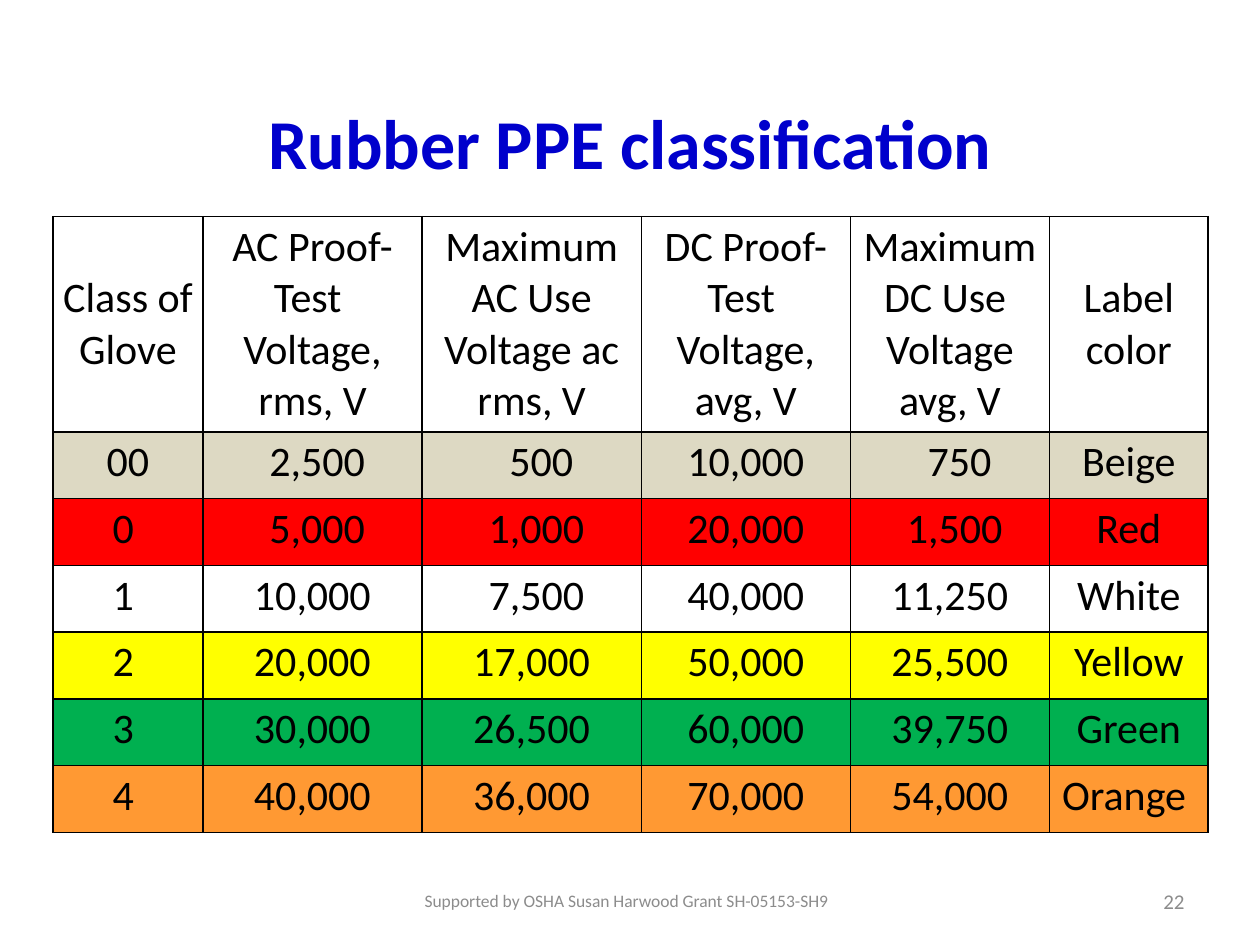
from dataclasses import dataclass

import pptx
import pptx.dml.color
import pptx.enum.text
import pptx.oxml
import pptx.oxml.ns
import pptx.util
from pptx.enum.text import MSO_ANCHOR, PP_ALIGN


@dataclass(frozen=True)
class Theme:
    font: str = "Calibri"
    title: str = "0000CC"
    ink: str = "000000"
    muted: str = "8C8C8C"
    title_size: int = 40
    table_size: int = 24
    footer_size: int = 10
    number_size: int = 12
    border_width: int = 1


@dataclass(frozen=True)
class Box:
    """A rectangle in inches."""
    left: float
    top: float
    width: float
    height: float


@dataclass(frozen=True)
class GloveClass:
    name: str
    voltages: tuple[int, int, int, int]
    label: str
    fill: str | None


THEME = Theme()
FIGURE_SPACE = " "
VOLTAGE_DIGITS = 5
CLASS_DIGITS = 2
TITLE_BOX = Box(0.5, 0.5, 9, 1.25)
TABLE_BOX = Box(0.42, 1.72, 9.17, 4.75)
FOOTER_BOX = Box(3.18, 6.95, 3.58, 0.4)
NUMBER_BOX = Box(7.17, 6.95, 2.33, 0.4)
COLUMN_WIDTHS = (1.19, 1.74, 1.74, 1.66, 1.58, 1.26)
HEADER_HEIGHT, ROW_HEIGHT = 1.57, 0.53

HEADERS = (
    "Class of Glove",
    "AC Proof-Test \nVoltage, rms, V",
    "Maximum AC Use Voltage ac rms, V",
    "DC Proof-Test \nVoltage, avg, V",
    "Maximum DC Use \nVoltage avg, V",
    "Label color",
)
GLOVE_CLASSES = (
    GloveClass("00", (2500, 500, 10000, 750), "Beige", "DDD9C3"),
    GloveClass("0", (5000, 1000, 20000, 1500), "Red", "FF0000"),
    GloveClass("1", (10000, 7500, 40000, 11250), "White", None),
    GloveClass("2", (20000, 17000, 50000, 25500), "Yellow", "FFFF00"),
    GloveClass("3", (30000, 26500, 60000, 39750), "Green", "00B050"),
    GloveClass("4", (40000, 36000, 70000, 54000), "Orange ", "FF9933"),
)


def inches(box: Box) -> list[pptx.util.Length]:
    return [pptx.util.Inches(n) for n in (box.left, box.top, box.width, box.height)]


def write(text_frame, text: str, size: int, color: str,
          align=PP_ALIGN.CENTER, bold: bool = False) -> None:
    """Fill the first paragraph, with a line break at each newline."""
    paragraph = text_frame.paragraphs[0]
    paragraph.alignment = align
    for index, line in enumerate(text.split("\n")):
        if index:
            paragraph.add_line_break()
        run = paragraph.add_run()
        run.text = line
        run.font.name = THEME.font
        run.font.size = pptx.util.Pt(size)
        run.font.bold = bold
        run.font.color.rgb = pptx.dml.color.RGBColor.from_string(color)


def add_title(slide, text: str) -> None:
    title = slide.shapes.title
    title.left, title.top, title.width, title.height = inches(TITLE_BOX)
    title.text_frame.vertical_anchor = MSO_ANCHOR.MIDDLE
    write(title.text_frame, text, THEME.title_size, THEME.title, bold=True)


def add_footer(slide, box: Box, text: str, size: int, align) -> None:
    text_frame = slide.shapes.add_textbox(*inches(box)).text_frame
    text_frame.word_wrap = True
    text_frame.vertical_anchor = MSO_ANCHOR.MIDDLE
    write(text_frame, text, size, THEME.muted, align)


def draw_borders(cell) -> None:
    properties = cell._tc.get_or_add_tcPr()
    width = pptx.util.Pt(THEME.border_width)
    for index, side in enumerate(("lnL", "lnR", "lnT", "lnB")):
        properties.insert(index, pptx.oxml.parse_xml(
            f'<a:{side} {pptx.oxml.ns.nsdecls("a")} w="{width}"><a:solidFill>'
            f'<a:srgbClr val="{THEME.ink}"/></a:solidFill></a:{side}>'))


def fill_cell(cell, text: str, fill: str | None, anchor) -> None:
    cell.margin_left = cell.margin_right = pptx.util.Inches(0.08)
    cell.margin_top = cell.margin_bottom = pptx.util.Inches(0.04)
    cell.vertical_anchor = anchor
    if fill:
        cell.fill.solid()
        cell.fill.fore_color.rgb = pptx.dml.color.RGBColor.from_string(fill)
    else:
        cell.fill.background()
    draw_borders(cell)
    write(cell.text_frame, text, THEME.table_size, THEME.ink)


def row_texts(glove: GloveClass) -> list[str]:
    """Pad numbers with figure spaces so that centred digits line up."""
    voltages = [FIGURE_SPACE * (VOLTAGE_DIGITS - len(str(volts))) + f"{volts:,}"
                for volts in glove.voltages]
    return [glove.name.ljust(CLASS_DIGITS, FIGURE_SPACE), *voltages, glove.label]


def add_classification_table(slide) -> None:
    table = slide.shapes.add_table(
        len(GLOVE_CLASSES) + 1, len(HEADERS), *inches(TABLE_BOX)).table
    table.first_row = table.horz_banding = False
    for column, width in zip(table.columns, COLUMN_WIDTHS):
        column.width = pptx.util.Inches(width)
    for index, row in enumerate(table.rows):
        row.height = pptx.util.Inches(ROW_HEIGHT if index else HEADER_HEIGHT)

    for column, text in enumerate(HEADERS):
        fill_cell(table.cell(0, column), text, None, MSO_ANCHOR.MIDDLE)
    for row, glove in enumerate(GLOVE_CLASSES, start=1):
        for column, text in enumerate(row_texts(glove)):
            fill_cell(table.cell(row, column), text, glove.fill, MSO_ANCHOR.TOP)


def main() -> None:
    presentation = pptx.Presentation()
    presentation.slide_width = pptx.util.Inches(10)
    presentation.slide_height = pptx.util.Inches(7.5)
    slide = presentation.slides.add_slide(
        presentation.slide_layouts.get_by_name("Title Only"))
    add_title(slide, "Rubber PPE classification")
    add_classification_table(slide)
    add_footer(slide, FOOTER_BOX, "Supported by OSHA Susan Harwood Grant SH-05153-SH9",
               THEME.footer_size, PP_ALIGN.CENTER)
    add_footer(slide, NUMBER_BOX, "22", THEME.number_size, PP_ALIGN.RIGHT)
    presentation.save("out.pptx")


if __name__ == "__main__":
    main()
